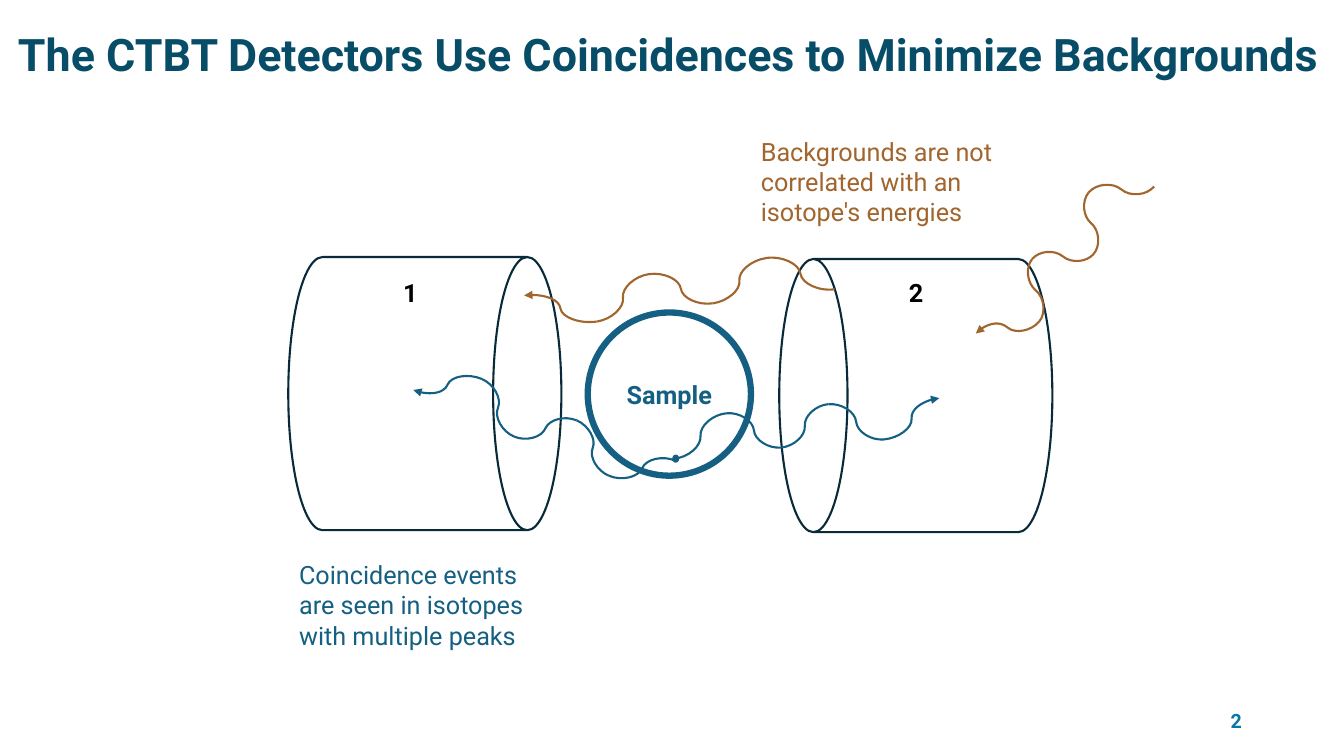
"""Build a slide on coincidence detection with two detectors and a sample."""
from math import cos, radians, sin

from lxml import etree
from pptx import Presentation
from pptx.dml.color import RGBColor
from pptx.enum.shapes import MSO_CONNECTOR, MSO_SHAPE
from pptx.enum.text import MSO_ANCHOR, MSO_AUTO_SIZE, PP_ALIGN
from pptx.oxml.ns import qn
from pptx.util import Pt

CURVE = MSO_CONNECTOR.CURVE
CAN, OVAL = MSO_SHAPE.CAN, MSO_SHAPE.OVAL
TOP, MIDDLE = MSO_ANCHOR.TOP, MSO_ANCHOR.MIDDLE
LEFT, CENTER, RIGHT = PP_ALIGN.LEFT, PP_ALIGN.CENTER, PP_ALIGN.RIGHT
FIXED = MSO_AUTO_SIZE.NONE

NAVY = RGBColor(0x07, 0x4D, 0x68)
TEAL = RGBColor(0x15, 0x60, 0x82)
BROWN = RGBColor(0xA1, 0x65, 0x2D)
INK = RGBColor(0x09, 0x2A, 0x39)
BLACK = RGBColor(0, 0, 0)
BLUE = RGBColor(0x07, 0x77, 0xA8)

NOTES = [
    ("Coincidence events are seen in isotopes with multiple peaks",
     (206.6, 396, 184.3, 72.7), TEAL),
    ("Backgrounds are not correlated with an isotope's energies",
     (536.4, 93.6, 184.3, 72.7), BROWN),
]
CANS = [("1", (205.9, 183.6), 90, 280.8), ("2", (556.6, 185), 270, 642.2)]
WAVES = [
    (355, TEAL, [(481.7, 327.6), (519.1, 295.2), (558, 319.7),
                 (591.8, 288.7), (631.4, 313.9), (671, 284.4)]),
    (203, TEAL, [(482.4, 329), (434.9, 339.8), (411.8, 300.2),
                 (367.2, 311.8), (344.2, 270.7), (295.2, 278.6)]),
    (130, BROWN, [(824.4, 133.2), (777.6, 137.5), (781.2, 181.4),
                  (737.3, 185), (742.3, 229.7), (697, 238.3)]),
    (172, BROWN, [(596.2, 206.6), (547.2, 184.3), (509, 216.7),
                  (463.7, 195.8), (426.2, 229.7), (374.4, 211)]),
]


def style(item, values):
    """Set each named attribute of an item."""
    for name, value in values.items():
        setattr(item, name, value)


def write(shape, text, color, size=18, bold=True, align=LEFT, anchor=TOP):
    """Put one formatted paragraph into a shape."""
    frame = shape.text_frame
    style(frame, {"word_wrap": True, "auto_size": FIXED,
                  "vertical_anchor": anchor})
    para = frame.paragraphs[0]
    para.alignment = align
    run = para.add_run()
    run.text = text
    style(run.font, {"name": "Roboto", "size": Pt(size), "bold": bold})
    run.font.color.rgb = color


def label(slide, text, box, color, **look):
    """Add a text box."""
    shape = slide.shapes.add_textbox(*map(Pt, box))
    write(shape, text, color, **look)


def outline(slide, kind, box, color, width, turn=0):
    """Add an unfilled shape and return it."""
    shape = slide.shapes.add_shape(kind, *map(Pt, box))
    shape.shadow.inherit = False
    shape.rotation = turn
    shape.fill.background()
    shape.line.color.rgb = color
    shape.line.width = Pt(width)
    return shape


def unturn(start, end, angle):
    """Turn a segment back about its centre."""
    mid_x, mid_y = (start[0] + end[0]) / 2, (start[1] + end[1]) / 2
    half_x, half_y = end[0] - mid_x, end[1] - mid_y
    turn = radians(-angle)
    dx = half_x * cos(turn) - half_y * sin(turn)
    dy = half_x * sin(turn) + half_y * cos(turn)
    return mid_x - dx, mid_y - dy, mid_x + dx, mid_y + dy


def wave(slide, angle, color, points):
    """Chain curved connectors into a wave that ends in an arrow."""
    group = slide.shapes.add_group_shape()
    for start, end in zip(points, points[1:]):
        ends = map(Pt, unturn(start, end, angle))
        curve = group.shapes.add_connector(CURVE, *ends)
        curve.line.color.rgb = color
        curve.line.width = Pt(1.5)
        props = curve.element.spPr
        props.find(qn("a:xfrm")).set("rot", str(angle * 60000))
        etree.SubElement(props, qn("a:effectLst"))
    tip = etree.SubElement(props.find(qn("a:ln")), qn("a:tailEnd"))
    tip.set("type", "triangle")


def main():
    """Build and save the slide."""
    deck = Presentation()
    style(deck, {"slide_width": Pt(960), "slide_height": Pt(540)})
    slide = deck.slides.add_slide(deck.slide_layouts[5])
    title = slide.shapes.title
    style(title, {"left": Pt(-1.4), "top": Pt(15.8),
                  "width": Pt(961.2), "height": Pt(46.1)})
    write(title, " The CTBT Detectors Use Coincidences to Minimize Backgrounds",
          NAVY, size=32)
    for text, box, color in NOTES:
        label(slide, text, box, color, bold=False)
    sample = outline(slide, OVAL, (419.8, 223.2, 116.6, 116.6), TEAL, 4.5)
    write(sample, "Sample", TEAL, align=CENTER, anchor=MIDDLE)
    for text, spot, turn, left in CANS:
        outline(slide, CAN, (*spot, 195.1, 195.1), INK, 1.5, turn)
        label(slide, text, (left, 194.4, 44.6, 37.4), BLACK)
    for angle, color, points in WAVES:
        wave(slide, angle, color, points)
    dot = outline(slide, OVAL, (480.2, 324.7, 5, 5.8), TEAL, 1)
    dot.fill.solid()
    dot.fill.fore_color.rgb = TEAL
    dot.line.fill.background()
    label(slide, "2", (678.2, 500.4, 216, 28.8), BLUE, size=14,
          align=RIGHT, anchor=MIDDLE)
    deck.save("out.pptx")


if __name__ == "__main__":
    main()
